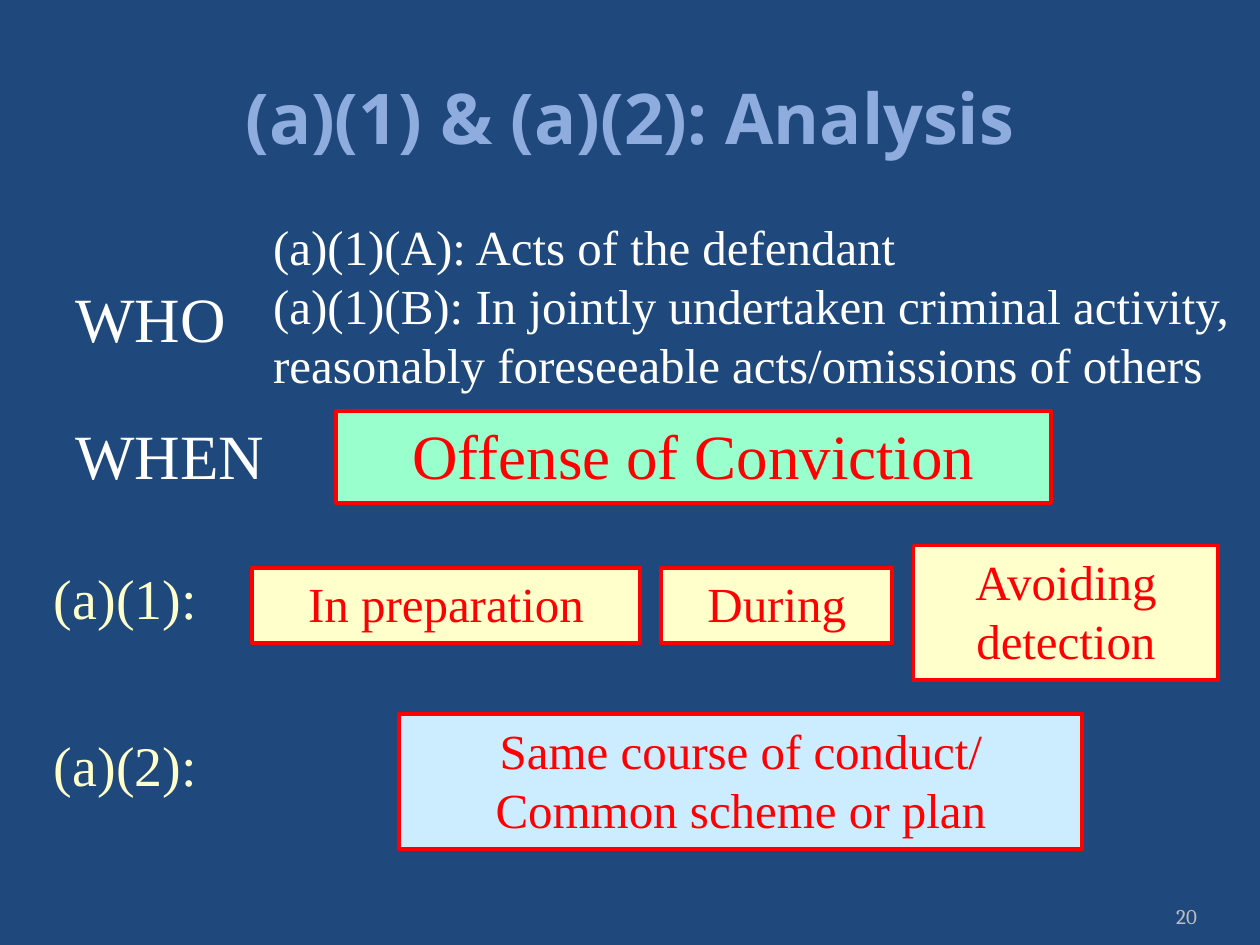
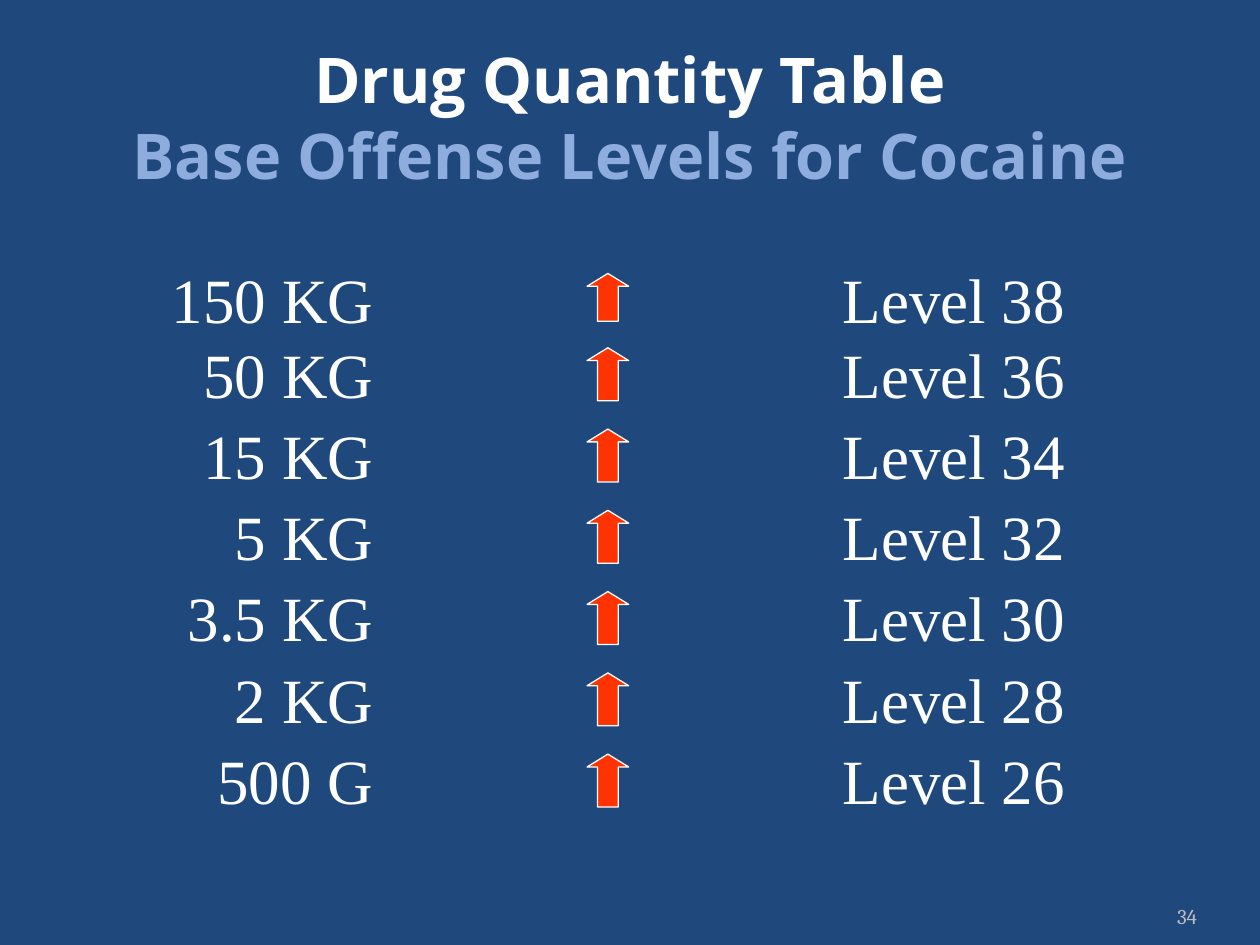
from lxml import etree
from pptx import Presentation, util as u
from pptx.dml.color import RGBColor
from pptx.enum import shapes, text

SERIF, SANS, SMALL = "Times New Roman", "Open Sans", "Cambria"
NAVY, WHITE, PALE, GREY = "1F497D", "FFFFFF", "8FACDE", "BDBDBD"
RED, ORANGE = "FF0000", "FF3300"
MINT, CREAM, SKY = "99FFCC", "FFFFCC", "CCECFF"
LEFT, MID, RIGHT = text.PP_ALIGN.LEFT, text.PP_ALIGN.CENTER, text.PP_ALIGN.RIGHT
TOP, CENTRE, BASE = (text.MSO_ANCHOR.TOP, text.MSO_ANCHOR.MIDDLE,
                     text.MSO_ANCHOR.BOTTOM)


def tint(code):
    return RGBColor.from_string(code)


def inches(box):
    return [u.Inches(n) for n in box]


def write(shape, *lines, size=36, font=SERIF, color=WHITE, bold=False,
          align=LEFT, anchor=TOP, inset=0.1):
    """Fill the shape with paragraphs; color is one hex string or one per line."""
    frame = shape.text_frame
    frame.word_wrap = True
    frame.vertical_anchor = anchor
    frame.margin_left = frame.margin_right = u.Inches(inset)
    colors = [color] * len(lines) if isinstance(color, str) else color
    for i, (line, code) in enumerate(zip(lines, colors)):
        para = frame.add_paragraph() if i else frame.paragraphs[0]
        para.alignment = align
        run = para.add_run()
        run.text = line
        run.font.size = u.Pt(size)
        run.font.name = font
        run.font.bold = bold
        run.font.color.rgb = tint(code)


def label(slide, box, *lines, **style):
    write(slide.shapes.add_textbox(*inches(box)), *lines, **style)


def draw(slide, kind, box, fill, edge, width):
    shape = slide.shapes.add_shape(kind, *inches(box))
    shape.shadow.inherit = False
    shape.fill.solid()
    shape.fill.fore_color.rgb = tint(fill)
    shape.line.color.rgb = tint(edge)
    shape.line.width = u.Pt(width)
    return shape


def panel(slide, box, words, fill, size=28):
    shape = draw(slide, shapes.MSO_SHAPE.RECTANGLE, box, fill, RED, 2.25)
    write(shape, words, size=size, color=RED, align=MID)


def start(deck, number, *title, size, color):
    """Add a slide with the shared background, title and page number."""
    slide = deck.slides.add_slide(deck.slide_layouts[6])
    slide.background.fill.solid()
    slide.background.fill.fore_color.rgb = tint(NAVY)
    label(slide, (0.5, 0.3, 9, 1.25), *title, size=size, font=SANS,
          color=color, bold=True, align=MID, anchor=CENTRE)
    label(slide, (8.67, 7.02, 0.83, 0.4), number, size=12, font=SMALL,
          color=GREY, align=RIGHT, anchor=BASE, inset=0)
    return slide


def who(slide, x, y):
    label(slide, (x, y + 0.5, 1.41, 0.71), "WHO")
    label(slide, (x + 1.57, y, 7.93, 1.51),
          "(a)(1)(A): Acts of the defendant",
          "(a)(1)(B): In jointly undertaken criminal activity, "
          "reasonably foreseeable acts/omissions of others", size=28)


def when(slide, x, y):
    label(slide, (x, y, 1.72, 0.71), "WHEN")
    panel(slide, (x + 2.17, y, 5.67, 0.73), "Offense of Conviction", MINT, 36)


def timing(slide, x, y):
    """Place the (a)(1) row: three boxes with equal gaps on one centre line."""
    label(slide, (x, y + 0.09, 1.5, 0.63), "(a)(1):", size=32, color=CREAM)
    left, gap = x + 1.67, 0.17
    for words, width, height in (("In preparation", 3.08, 0.6),
                                 ("During", 1.83, 0.6),
                                 ("Avoiding detection", 2.42, 1.07)):
        top = y + (1.07 - height) / 2 - (0.06 if height < 1 else 0)
        panel(slide, (left, top, width, height), words, CREAM)
        left += width + gap


def course(slide, x, y):
    label(slide, (x, y + 0.08, 1.42, 0.63), "(a)(2):", size=32, color=CREAM)
    panel(slide, (x + 2.84, y, 5.42, 1.07),
          "Same course of conduct/ Common scheme or plan", SKY)


def level(slide, x, y, weight, grade, tall):
    """Place one row: drug weight, up arrow, offense level."""
    arrow = draw(slide, shapes.MSO_SHAPE.UP_ARROW,
                 (x + 3.6, y + 0.15, 0.33, tall), ORANGE, WHITE, 0.75)
    arrow.adjustments[0] = 0.5
    arrow.adjustments[1] = 0.31
    label(slide, (x, y, 2, 0.71), weight, align=RIGHT)
    label(slide, (x + 5.52, y, 1.98, 0.71), f"Level {grade}", align=MID)


def levels(slide, x, y):
    weights = ("150 KG", "50 KG", "15 KG", "5 KG", "3.5 KG", "2 KG", "500 G")
    for i, weight in enumerate(weights):
        top = y + 0.59 + 0.645 * (i - 1) if i else y
        level(slide, x, top, weight, 38 - 2 * i, 0.42 if i else 0.38)


def main():
    deck = Presentation()
    deck.slide_width, deck.slide_height = u.Inches(10), u.Inches(7.5)

    slide = start(deck, "20", "(a)(1) & (a)(2): Analysis", size=40, color=PALE)
    who(slide, 0.5, 1.67)
    when(slide, 0.5, 3.26)
    timing(slide, 0.33, 4.33)
    course(slide, 0.33, 5.67)

    slide = start(deck, "34", "Drug Quantity Table",
                  "Base Offense Levels for Cocaine", size=36,
                  color=(WHITE, PALE))
    levels(slide, 1.06, 2.02)

    deck.save("out.pptx")


if __name__ == "__main__":
    main()
